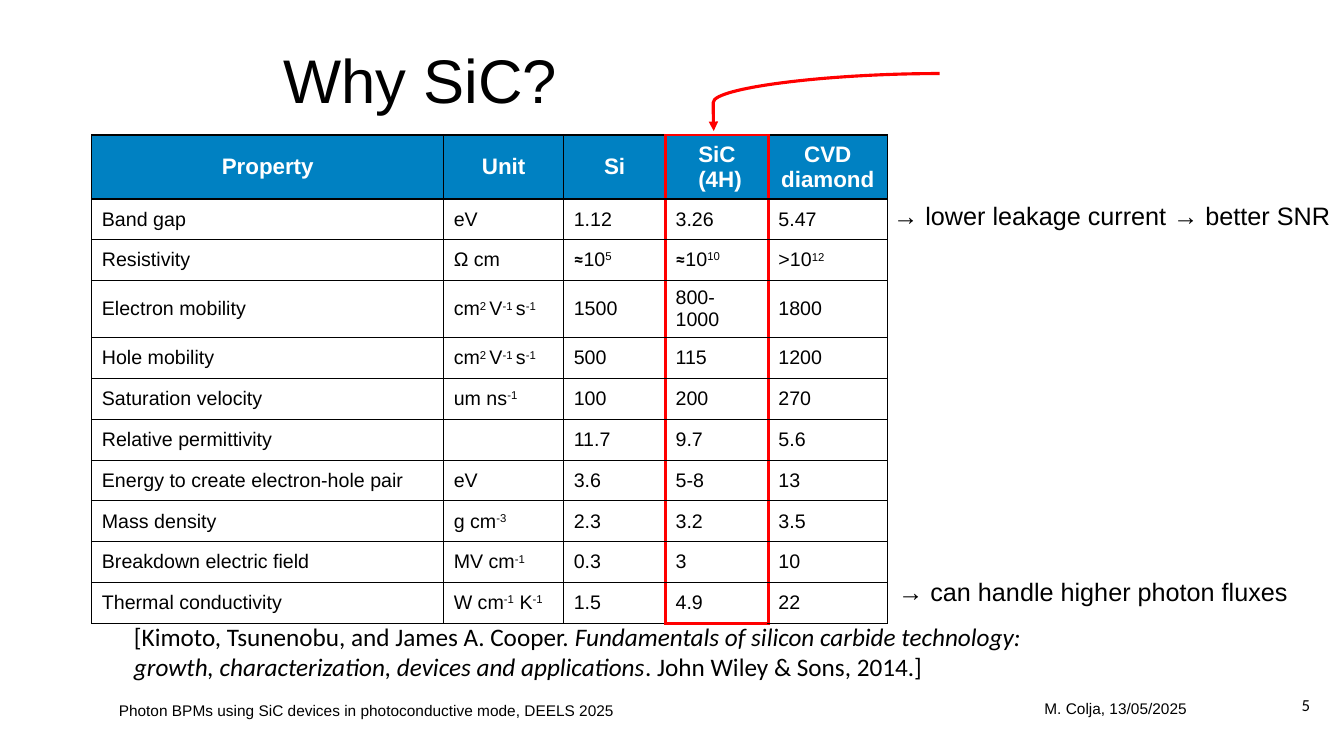
import pptx
import pptx.util
import pptx.dml.color
import pptx.enum.shapes
import pptx.enum.text
import pptx.oxml
import pptx.oxml.ns

RGB = pptx.dml.color.RGBColor
BLACK = RGB(0x00, 0x00, 0x00)
WHITE = RGB(0xFF, 0xFF, 0xFF)
BLUE = RGB(0x00, 0x81, 0xC2)
RED = RGB(0xFF, 0x00, 0x00)
Pt, Inches = pptx.util.Pt, pptx.util.Inches
MIDDLE = pptx.enum.text.MSO_ANCHOR.MIDDLE
ALIGN = pptx.enum.text.PP_ALIGN
FIT = pptx.enum.text.MSO_AUTO_SIZE.SHAPE_TO_FIT_TEXT

deck = pptx.Presentation()
deck.slide_width, deck.slide_height = Inches(13.33), Inches(7.5)
COL, ROW = deck.slide_width / 100, deck.slide_height / 100
slide = deck.slides.add_slide(deck.slide_layouts[5])

BODY = dict(name="Arial", size=Pt(14), bold=False)
HEAD = dict(name="Arial", size=Pt(16), bold=True)
SIGN = dict(name="Calibri", size=Pt(14), bold=True)
TITLE = dict(name="Arial", size=Pt(44))
NOTE = dict(name="Arial", size=Pt(18))
CITE = dict(name="Calibri", size=Pt(18), italic=False)
BOOK = dict(CITE, italic=True)
FOOT = dict(name="Arial", size=Pt(11))
PAGE = dict(name="Calibri", size=Pt(12))


def write(para, text, style, color=BLACK):
    """Add runs to a paragraph; every second part between ^ marks is superscript."""
    for i, part in enumerate(text.split("^")):
        if not part:
            continue
        run = para.add_run()
        run.text = part
        for key, value in style.items():
            setattr(run.font, key, value)
        run.font.color.rgb = color
        if i % 2:
            run._r.get_or_add_rPr().set("baseline", "30000")


def place(x, y, w, h):
    """Turn shares of the slide, in percent, into lengths."""
    return [int(v) for v in (x * COL, y * ROW, w * COL, h * ROW)]


# Title
title = slide.shapes.title
title.left, title.top, title.width, title.height = place(20.33, 5.33, 72.84, 11.47)
title.text_frame.vertical_anchor = MIDDLE
para = title.text_frame.paragraphs[0]
para.alignment, para.line_spacing = ALIGN.LEFT, 0.9
write(para, "Why SiC?", TITLE)

# Footer
PAD = (0.1, 0.06, 0.1, 0.05)
for text, style, pad, spot in (
    ("Photon BPMs using SiC devices in photoconductive mode, DEELS 2025",
     FOOT, PAD, (8.1, 92.13, 43.96, 5.2)),
    ("M. Colja, 13/05/2025", FOOT, PAD, (76.97, 91.87, 18.53, 4.53)),
    ("5", PAGE, (0, 0, 0, 0), (96.85, 92.13, 1.73, 3.33)),
):
    frame = slide.shapes.add_textbox(*place(*spot)).text_frame
    frame.word_wrap = True
    for side, gap in zip(("left", "top", "right", "bottom"), pad):
        setattr(frame, "margin_" + side, Inches(gap))
    frame.paragraphs[0].line_spacing = 0.93
    write(frame.paragraphs[0], text, style)

# Table of material properties
MOVE = "cm^2 ^V^-1 ^s^-1"
DATA = [
    ("Property", "Unit", "Si", "SiC\n (4H)", "CVD\ndiamond"),
    ("Band gap", "eV", "1.12", "3.26", "5.47"),
    ("Resistivity", "Ω cm", "≈10^5", "≈10^10", ">10^12"),
    ("Electron mobility", MOVE, "1500", "800-1000", "1800"),
    ("Hole mobility", MOVE, "500", "115", "1200"),
    ("Saturation velocity", "um ns^-1", "100", "200", "270"),
    ("Relative permittivity", "", "11.7", "9.7", "5.6"),
    ("Energy to create electron-hole pair", "eV", "3.6", "5-8", "13"),
    ("Mass density", "g cm^-3", "2.3", "3.2", "3.5"),
    ("Breakdown electric field", "MV cm^-1", "0.3", "3", "10"),
    ("Thermal conductivity", "W cm^-1^ K^-1", "1.5", "4.9", "22"),
]
WIDE = (26.18, 8.93, 7.58, 7.65, 8.85)
TALL = [3.73] + [5.4] * (len(DATA) - 1)
PICK = 3
LAST = len(DATA) - 1
table = slide.shapes.add_table(
    len(DATA), len(WIDE), *place(6.83, 17.87, sum(WIDE), sum(TALL))).table
table.first_row = table.horz_banding = False
for col, wide in zip(table.columns, WIDE):
    col.width = int(wide * COL)
for row, tall in zip(table.rows, TALL):
    row.height = int(tall * ROW)

for r, line in enumerate(DATA):
    for c, text in enumerate(line):
        cell = table.cell(r, c)
        cell.vertical_anchor = MIDDLE
        if r == 0:
            cell.fill.solid()
            cell.fill.fore_color.rgb = BLUE
        else:
            cell.fill.background()
        for i, part in enumerate(text.split("\n")):
            para = cell.text_frame.add_paragraph() if i else cell.text_frame.paragraphs[0]
            para.alignment = ALIGN.LEFT if r else ALIGN.CENTER
            if part.startswith("≈"):
                write(para, "≈", SIGN)
                part = part[1:]
            write(para, part, BODY if r else HEAD, BLACK if r else WHITE)
        edges = {
            "L": c in (PICK, PICK + 1),
            "R": c in (PICK - 1, PICK),
            "T": c == PICK and r == 0,
            "B": c == PICK and r == LAST,
        }
        for i, (side, hot) in enumerate(edges.items()):
            cell._tc.get_or_add_tcPr().insert(i, pptx.oxml.parse_xml(
                f'<a:ln{side} {pptx.oxml.ns.nsdecls("a")} w="{Pt(2.25 if hot else 1)}">'
                f'<a:solidFill><a:srgbClr val="{RED if hot else BLACK}"/></a:solidFill>'
                f'</a:ln{side}>'))

# Remarks beside the table and the reference below it
for parts, wrap, spot in (
    ([("→ lower leakage current → better SNR", NOTE)], False, (65.72, 25.87, 34.36, 5.33)),
    ([("→ can handle higher photon fluxes", NOTE)], False, (66.09, 75.6, 30.76, 5.33)),
    ([("[Kimoto, Tsunenobu, and James A. Cooper. ", CITE),
      ("Fundamentals of silicon carbide technology: growth, characterization, "
       "devices and applications", BOOK),
      (". John Wiley & Sons, 2014.]", CITE)], True, (9.23, 81.47, 72.17, 9.47)),
):
    frame = slide.shapes.add_textbox(*place(*spot)).text_frame
    frame.word_wrap, frame.auto_size = wrap, FIT
    for text, style in parts:
        write(frame.paragraphs[0], text, style)

# Curved arrow to the SiC column
arrow = slide.shapes.add_connector(
    pptx.enum.shapes.MSO_CONNECTOR.CURVE,
    *place(69.92, 9.73, 53.11, 17.33))
arrow.line.color.rgb, arrow.line.width = RED, Pt(2.25)
props = arrow._element.spPr
bend = props.prstGeom.get_or_add_avLst()
bend.append(pptx.oxml.parse_xml(
    f'<a:gd {pptx.oxml.ns.nsdecls("a")} name="adj1" fmla="val 100200"/>'))
arrow.line._get_or_add_ln().append(pptx.oxml.parse_xml(
    f'<a:tailEnd {pptx.oxml.ns.nsdecls("a")} type="triangle"/>'))
props.append(pptx.oxml.parse_xml(f'<a:effectLst {pptx.oxml.ns.nsdecls("a")}/>'))

deck.save("out.pptx")
